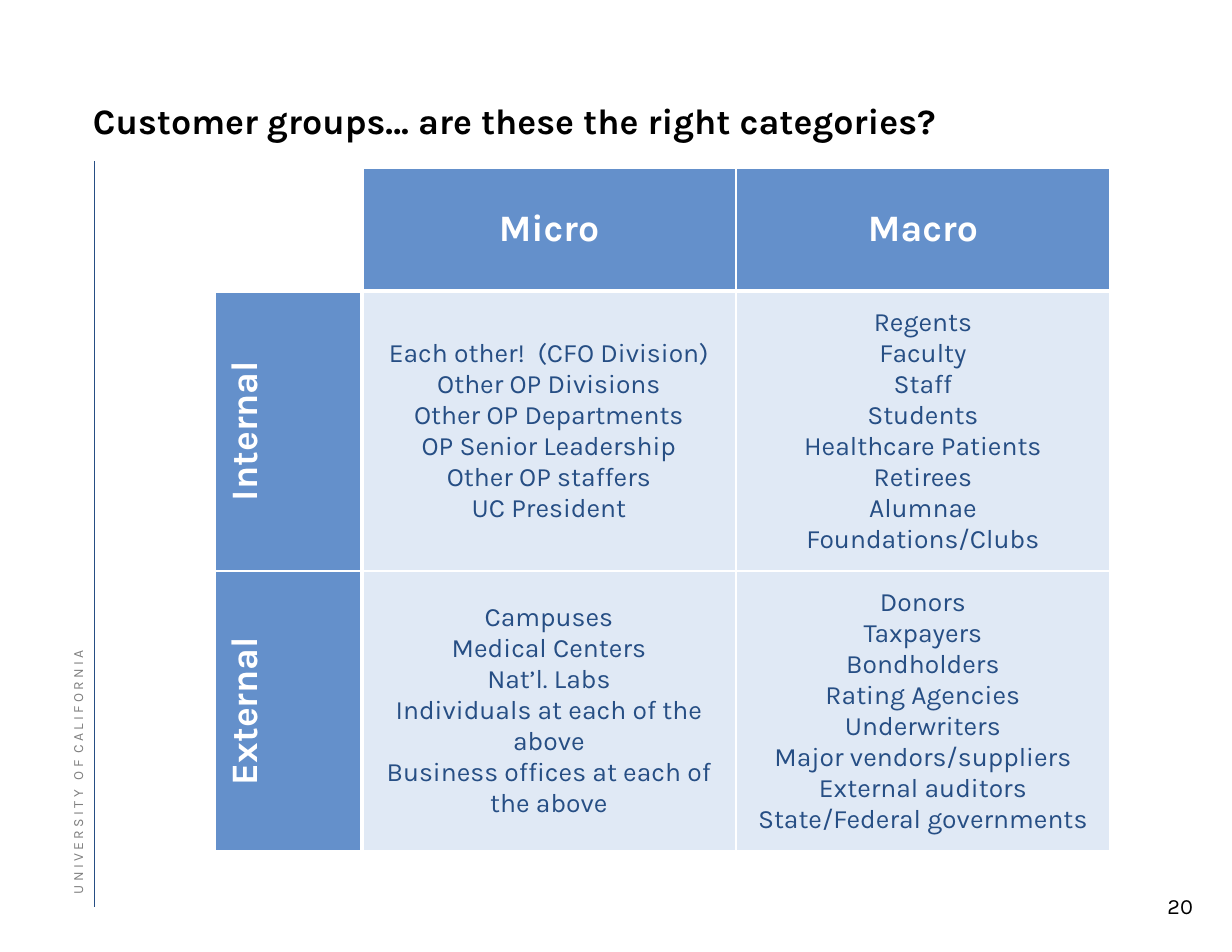
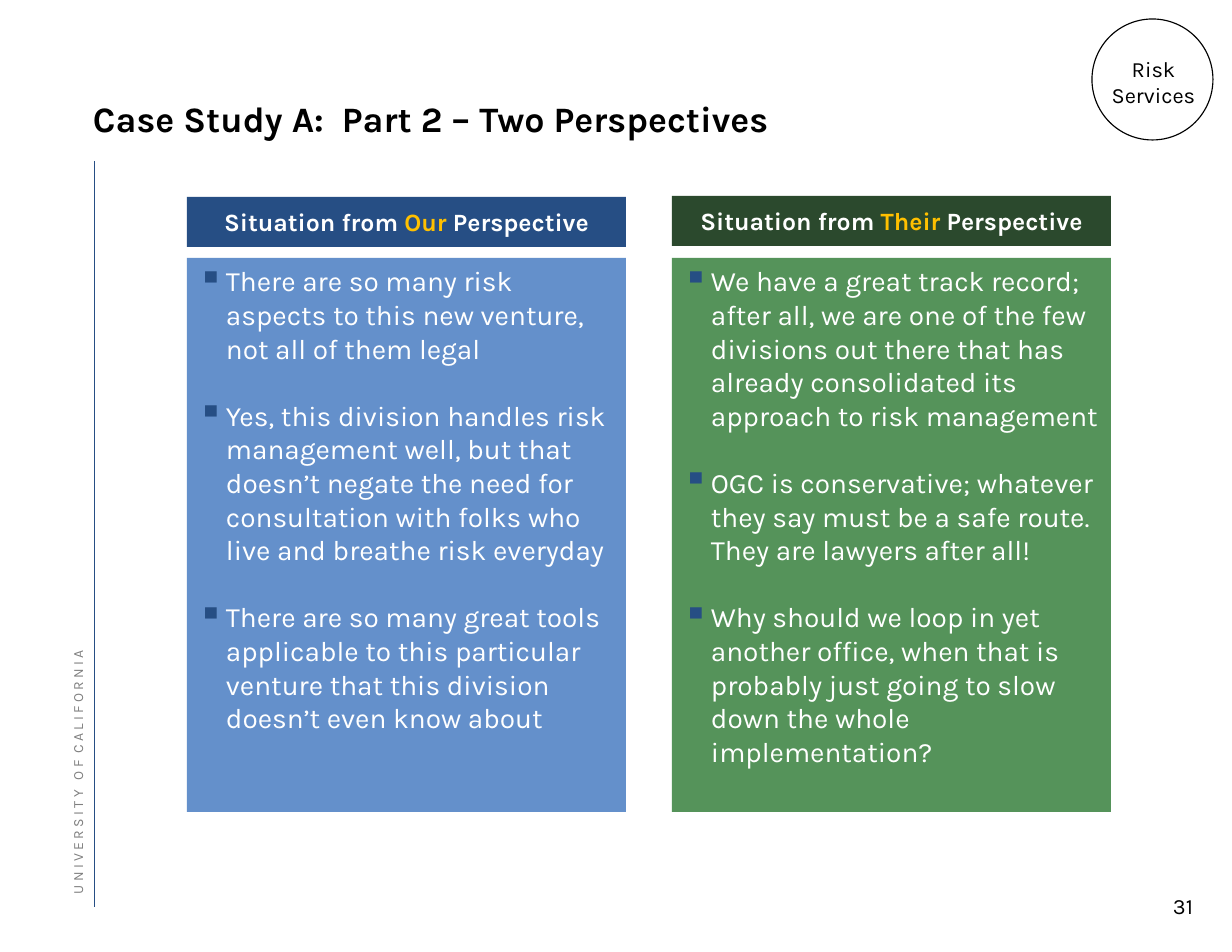
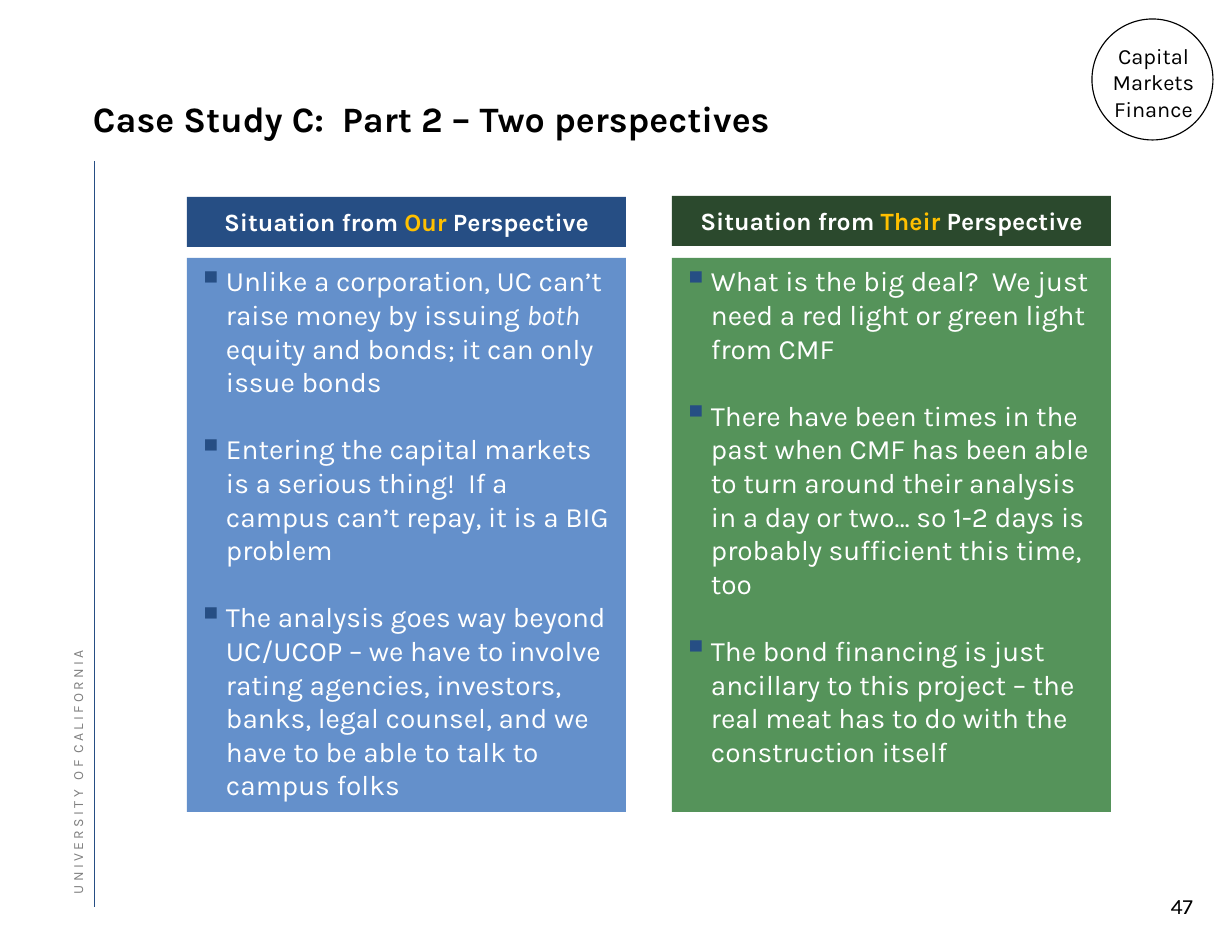
from dataclasses import dataclass

from lxml.etree import SubElement
from pptx import Presentation
from pptx.dml.color import RGBColor
from pptx.enum.shapes import MSO_CONNECTOR, MSO_SHAPE
from pptx.enum.text import MSO_ANCHOR, PP_ALIGN
from pptx.oxml.ns import qn
from pptx.util import Emu, Pt


@dataclass(frozen=True)
class Theme:
    font: str = "Karla"
    black: str = "000000"
    white: str = "FFFFFF"
    gray: str = "808080"
    navy: str = "264E84"
    blue: str = "6490CB"
    pale: str = "E0E9F5"
    green: str = "55935A"
    forest: str = "2B492D"
    gold: str = "FFC000"
    title: int = 23
    table_head: int = 24
    table_body: int = 17
    body: int = 18
    panel_head: int = 16
    small: int = 14
    motto: int = 9
    thin: int = 1
    thick: int = 3


INSETS = (11, 6, 11, 6)
NO_INSETS = (0, 0, 0, 0)
CELL_INSETS = (15, 8, 15, 8)


def px(n):
    return Emu(round(n * 914400 / 112))


def rgb(value):
    return RGBColor.from_string(value)


class Deck:
    def __init__(self, theme):
        self.theme = theme
        self.prs = Presentation()
        self.prs.slide_width, self.prs.slide_height = px(1232), px(952)
        self.slide = None

    def start(self, title, number, title_box):
        t = self.theme
        self.slide = self.prs.slides.add_slide(self.prs.slide_layouts[6])
        self.line(94, 161, 94, 907, t.navy, 0.35)
        self.text((1148, 887, 56, 37), [str(number)], t.small, t.black, align=PP_ALIGN.RIGHT)
        motto = self.text((-165, 643, 485, 17), ["U N I V E R S I T Y   O F  C A L I F O R N I A"],
                          t.motto, t.gray, insets=NO_INSETS, anchor=MSO_ANCHOR.BOTTOM, spacing=12)
        motto.rotation = 270
        self.text(title_box, [title], t.title, t.black, bold=True, insets=NO_INSETS,
                  anchor=MSO_ANCHOR.BOTTOM, spacing=27.9)

    def line(self, x1, y1, x2, y2, color, width):
        sp = self.slide.shapes.add_connector(MSO_CONNECTOR.STRAIGHT, px(x1), px(y1), px(x2), px(y2))
        sp.line.color.rgb = rgb(color)
        sp.line.width = Pt(width)
        SubElement(sp._element.spPr, qn("a:effectLst"))

    def shape(self, kind, box, fill=None, line=None):
        sp = self.slide.shapes.add_shape(kind, *map(px, box))
        sp.shadow.inherit = False
        if fill:
            sp.fill.solid()
            sp.fill.fore_color.rgb = rgb(fill)
        else:
            sp.fill.background()
        if line:
            sp.line.color.rgb = rgb(line)
            sp.line.width = Pt(0.75)
        else:
            sp.line.fill.background()
        return sp

    def text(self, box, paragraphs, size, color, insets=INSETS, anchor=MSO_ANCHOR.TOP, **style):
        sp = self.slide.shapes.add_textbox(*map(px, box))
        self.frame(sp.text_frame, insets, anchor)
        self.paragraphs(sp.text_frame, paragraphs, size, color, **style)
        return sp

    def frame(self, tf, insets=INSETS, anchor=MSO_ANCHOR.TOP):
        tf.word_wrap = True
        tf.vertical_anchor = anchor
        tf.margin_left, tf.margin_top, tf.margin_right, tf.margin_bottom = map(px, insets)

    def paragraphs(self, tf, paragraphs, size, color, bold=False, align=PP_ALIGN.LEFT,
                   spacing=None, gap=0, bullets=False):
        for i, runs in enumerate(paragraphs):
            p = tf.paragraphs[0] if i == 0 else tf.add_paragraph()
            if bullets:
                self.bullet(p)
            p.alignment = align
            if spacing:
                p.line_spacing = Pt(spacing)
            if gap and i:
                p.space_before = Pt(gap)
            for run in [runs] if isinstance(runs, str) else runs:
                content, changes = (run, {}) if isinstance(run, str) else run
                r = p.add_run()
                r.text = content
                r.font.name = self.theme.font
                r.font.size = Pt(size)
                r.font.bold = bold
                r.font.italic = changes.get("italic", False)
                r.font.color.rgb = rgb(changes.get("color", color))

    def bullet(self, p):
        pPr = p._p.get_or_add_pPr()
        pPr.set("marL", str(px(28)))
        pPr.set("indent", str(px(-28)))
        SubElement(SubElement(pPr, qn("a:buClr")), qn("a:srgbClr"), val=self.theme.navy)
        SubElement(pPr, qn("a:buSzPct"), val="125000")
        SubElement(pPr, qn("a:buChar"), char="▪")

    def table(self, x, y, widths, heights, rows):
        tbl = self.slide.shapes.add_table(len(heights), len(widths), px(x), px(y),
                                          px(sum(widths)), px(sum(heights))).table
        tbl.first_row = tbl.horz_banding = False
        for column, width in zip(tbl.columns, widths):
            column.width = px(width)
        for row, height in zip(tbl.rows, heights):
            row.height = px(height)
        for i, row in enumerate(rows):
            for j, paragraphs in enumerate(row):
                self.cell(tbl.cell(i, j), i, j, paragraphs)

    def cell(self, cell, i, j, paragraphs):
        t = self.theme
        tcPr = cell._tc.get_or_add_tcPr()
        thick = {"L": j == 1, "R": j == 0, "T": i == 1, "B": i == 0}
        for side, is_thick in thick.items():
            ln = SubElement(tcPr, qn(f"a:ln{side}"), w=str(Pt(t.thick if is_thick else t.thin)))
            SubElement(SubElement(ln, qn("a:solidFill")), qn("a:srgbClr"), val=t.white)
        if not paragraphs:
            cell.fill.background()
            return
        head = i == 0 or j == 0
        cell.fill.solid()
        cell.fill.fore_color.rgb = rgb(t.blue if head else t.pale)
        cell.vertical_anchor = MSO_ANCHOR.MIDDLE
        cell.margin_left, cell.margin_top, cell.margin_right, cell.margin_bottom = map(px, CELL_INSETS)
        if j == 0:
            tcPr.set("vert", "vert270")
        self.paragraphs(cell.text_frame, paragraphs, t.table_head if head else t.table_body,
                        t.white if head else t.navy, bold=head, align=PP_ALIGN.CENTER)

    def badge(self, paragraphs, width, height):
        t = self.theme
        self.shape(MSO_SHAPE.OVAL, (1092, 19, 121, 121), line=t.black)
        self.text((1153 - width // 2, 82 - height // 2, width, height), paragraphs,
                  t.small, t.black, align=PP_ALIGN.CENTER)

    def panel(self, x, head_y, owner, head_fill, fill, points):
        t = self.theme
        body = self.shape(MSO_SHAPE.RECTANGLE, (x, 258, 439, 554), fill)
        self.frame(body.text_frame)
        self.paragraphs(body.text_frame, points, t.body, t.white, gap=21.6, bullets=True)
        head = self.shape(MSO_SHAPE.RECTANGLE, (x, head_y, 439, 50), head_fill)
        self.frame(head.text_frame, anchor=MSO_ANCHOR.MIDDLE)
        runs = ["Situation from ", (owner, {"color": t.gold}), " Perspective"]
        self.paragraphs(head.text_frame, [runs], t.panel_head, t.white, bold=True,
                        align=PP_ALIGN.CENTER)

    def case_study(self, title, number, badge, badge_size, ours, theirs):
        t = self.theme
        self.start(title, number, (93, 103, 999, 37))
        self.badge(badge, *badge_size)
        self.panel(672, 196, "Their", t.forest, t.green, theirs)
        self.panel(187, 197, "Our", t.navy, t.blue, ours)


CUSTOMERS = [
    [[], ["Micro"], ["Macro"]],
    [
        ["Internal"],
        ["Each other!  (CFO Division)", "Other OP Divisions", "Other OP Departments",
         "OP Senior Leadership", "Other OP staffers", "UC President"],
        ["Regents", "Faculty", "Staff", "Students", "Healthcare Patients", "Retirees",
         "Alumnae", "Foundations/Clubs"],
    ],
    [
        ["External"],
        ["Campuses", "Medical Centers", "Nat’l. Labs", "Individuals at each of the above",
         "Business offices at each of the above"],
        ["Donors", "Taxpayers", "Bondholders", "Rating Agencies", "Underwriters",
         "Major vendors/suppliers", "External auditors", "State/Federal governments"],
    ],
]


def main():
    deck = Deck(Theme())

    deck.start("Customer groups… are these the right categories?", 20, (93, 106, 1064, 36))
    deck.table(215, 168, [147, 374, 374], [123, 280, 280], CUSTOMERS)

    deck.case_study(
        "Case Study A:  Part 2 – Two Perspectives", 31, ["Risk", "Services"], (107, 64),
        ours=[
            "There are so many risk aspects to this new venture, not all of them legal",
            "Yes, this division handles risk management well, but that doesn’t negate the need "
            "for consultation with folks who live and breathe risk everyday",
            "There are so many great tools applicable to this particular venture that this "
            "division doesn’t even know about",
        ],
        theirs=[
            "We have a great track record; after all, we are one of the few divisions out there "
            "that has already consolidated its approach to risk management",
            "OGC is conservative; whatever they say must be a safe route.  "
            "They are lawyers after all!",
            "Why should we loop in yet another office, when that is probably just going to slow "
            "down the whole implementation?",
        ])

    deck.case_study(
        "Case Study C:  Part 2 – Two perspectives", 47, ["Capital Markets Finance"], (131, 91),
        ours=[
            ["Unlike a corporation, UC can’t raise money by issuing ", ("both", {"italic": True}),
             " equity and bonds; it can only issue bonds"],
            "Entering the capital markets is a serious thing!  If a campus can’t repay, "
            "it is a BIG problem",
            "The analysis goes way beyond UC/UCOP – we have to involve rating agencies, "
            "investors, banks, legal counsel, and we have to be able to talk to campus folks",
        ],
        theirs=[
            "What is the big deal?  We just need a red light or green light from CMF",
            "There have been times in the past when CMF has been able to turn around their "
            "analysis in a day or two… so 1-2 days is probably sufficient this time, too",
            "The bond financing is just ancillary to this project – the real meat has to do "
            "with the construction itself",
        ])

    deck.prs.save("out.pptx")


if __name__ == "__main__":
    main()
